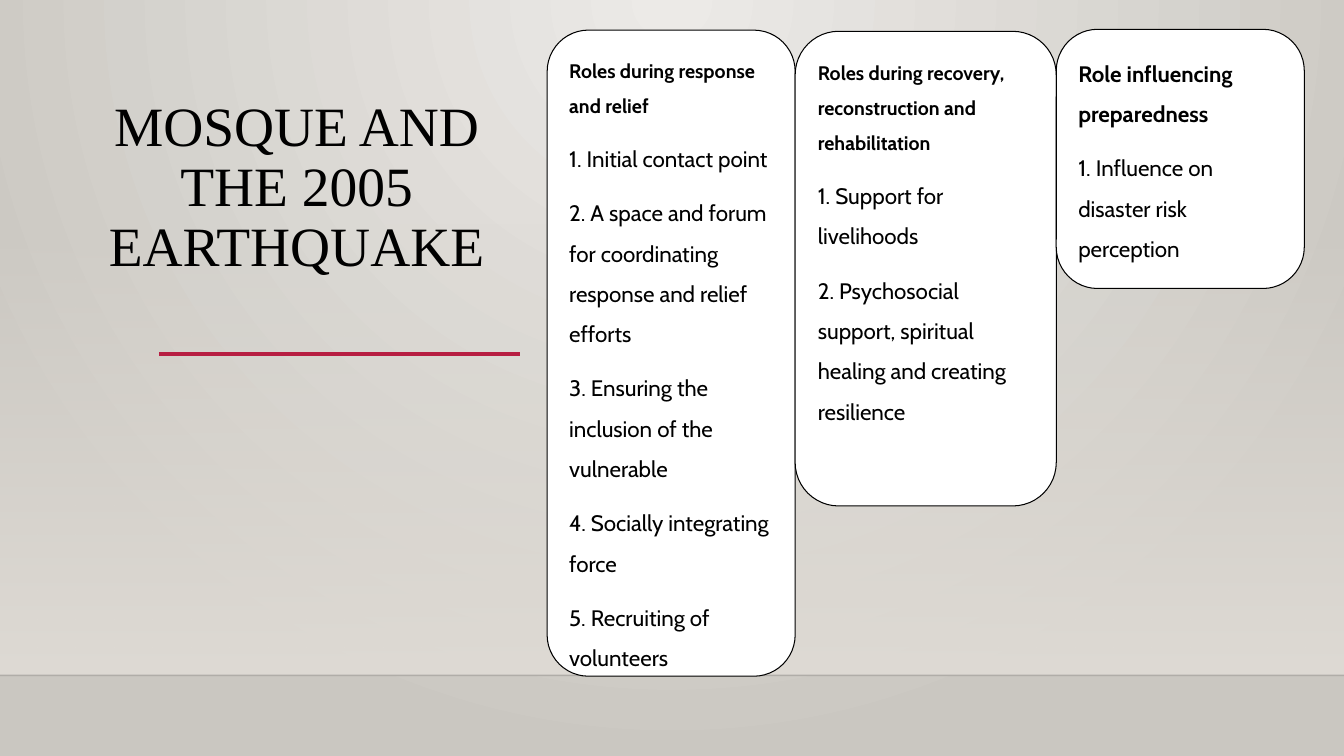
from pptx import Presentation
from pptx import util as u
from pptx.dml import color
from pptx.enum import shapes, text
from pptx.oxml import ns, xmlchemy as xml

BLACK = color.RGBColor(0x00, 0x00, 0x00)
WHITE = color.RGBColor(0xFF, 0xFF, 0xFF)
RED = color.RGBColor(0xB7, 0x1E, 0x42)
LIGHT = color.RGBColor(0xEC, 0xEA, 0xE7)
GREY = color.RGBColor(0xCA, 0xC7, 0xC1)
SAND = color.RGBColor(0xDF, 0xDB, 0xD5)

WIDE, HIGH, FLOOR = 33.87, 19.05, 17.02

CARDS = [
    (0.76, 6.25, 16.28, 14, "Roles during response and relief", [
        "Initial contact point",
        "A space and forum for coordinating response and relief efforts",
        "Ensuring the inclusion of the vulnerable",
        "Socially integrating force",
        "Recruiting of volunteers",
    ]),
    (0.79, 6.58, 11.96, 14, "Roles during recovery, reconstruction and rehabilitation", [
        "Support for livelihoods",
        "Psychosocial support, spiritual healing and creating resilience",
    ]),
    (0.74, 6.25, 6.53, 16, "Role influencing preparedness", [
        "Influence on disaster risk perception",
    ]),
]


def add(node, tag, **attrs):
    child = xml.OxmlElement(tag)
    for key, value in attrs.items():
        child.set(key, str(value))
    node.append(child)
    return child


def fade(node, share):
    add(node.find(".//" + ns.qn("a:srgbClr")), "a:alpha", val=share * 1000)


class Deck:
    head = "Times New Roman"
    body = "Cabin"

    def __init__(self):
        self.file = Presentation()
        self.file.slide_width = u.Cm(WIDE)
        self.file.slide_height = u.Cm(HIGH)
        self.slide = self.file.slides.add_slide(self.file.slide_layouts[6])

    def blend(self, fill, *tones):
        fill.gradient()
        for stop, tone in zip(fill.gradient_stops, tones):
            stop.color.rgb = tone

    def back(self):
        self.blend(self.slide.background.fill, LIGHT, GREY)
        grad = self.slide.element.find(".//" + ns.qn("a:gradFill"))
        grad.remove(grad.find(ns.qn("a:lin")))
        ring = add(grad, "a:path", path="circle")
        add(ring, "a:fillToRect", l=43000, t=0, r=43000, b=100000)

    def shape(self, kind, *box):
        item = self.slide.shapes.add_shape(kind, *map(u.Cm, box))
        item.shadow.inherit = False
        return item

    def wall(self, *box):
        item = self.shape(shapes.MSO_SHAPE.RECTANGLE, *box)
        item.line.fill.background()
        self.blend(item.fill, SAND, SAND)
        item.fill.gradient_angle = 270
        fade(item.element.spPr, 0)

    def rule(self, left, right, y, tone, size, share=100):
        item = self.slide.shapes.add_connector(
            shapes.MSO_CONNECTOR.STRAIGHT, *map(u.Cm, (left, y, right, y)))
        item.line.color.rgb = tone
        item.line.width = u.Pt(size)
        if share < 100:
            fade(item.element.spPr, share)
        add(item.element.spPr, "a:effectLst")

    def run(self, para, words, face, size, bold=False):
        run = para.add_run()
        run.text = words
        run.font.name = face
        run.font.size = u.Pt(size)
        run.font.bold = bold
        run.font.color.rgb = BLACK

    def title(self, words, *box):
        frame = self.slide.shapes.add_textbox(*map(u.Cm, box)).text_frame
        frame.word_wrap = True
        frame.vertical_anchor = text.MSO_ANCHOR.MIDDLE
        frame.margin_bottom = u.Cm(1.65)
        para = frame.paragraphs[0]
        para.alignment = text.PP_ALIGN.CENTER
        para.line_spacing = 0.9
        self.run(para, words, self.head, 39.6)

    def card(self, box, size, name, roles):
        item = self.shape(shapes.MSO_SHAPE.ROUNDED_RECTANGLE, *box)
        item.fill.solid()
        item.fill.fore_color.rgb = WHITE
        item.line.color.rgb = BLACK
        item.line.width = u.Pt(0.75)
        frame = item.text_frame
        frame.word_wrap = True
        frame.vertical_anchor = text.MSO_ANCHOR.TOP
        rows = [(name, size, True)]
        rows += [(f"{n}. {role}", 16, False) for n, role in enumerate(roles, 1)]
        for n, (words, points, bold) in enumerate(rows):
            para = frame.add_paragraph() if n else frame.paragraphs[0]
            para.alignment = text.PP_ALIGN.LEFT
            para.line_spacing = 1.5
            para.space_after = u.Pt(10)
            self.run(para, words, self.body, points, bold)


def main():
    deck = Deck()
    deck.back()
    deck.wall(0, 5.61, WIDE, FLOOR - 5.61)
    deck.rule(0, WIDE, FLOOR, BLACK, 1, 20)
    deck.rule(4.01, 13.11, 8.92, RED, 2.5)
    deck.title("MOSQUE AND THE 2005 EARTHQUAKE", 2.41, 2.34, 10.13, 6.35)
    left = 13.79
    for top, width, height, size, name, roles in CARDS:
        deck.card((left, top, width, height), size, name, roles)
        left += width
    deck.file.save("out.pptx")


if __name__ == "__main__":
    main()
